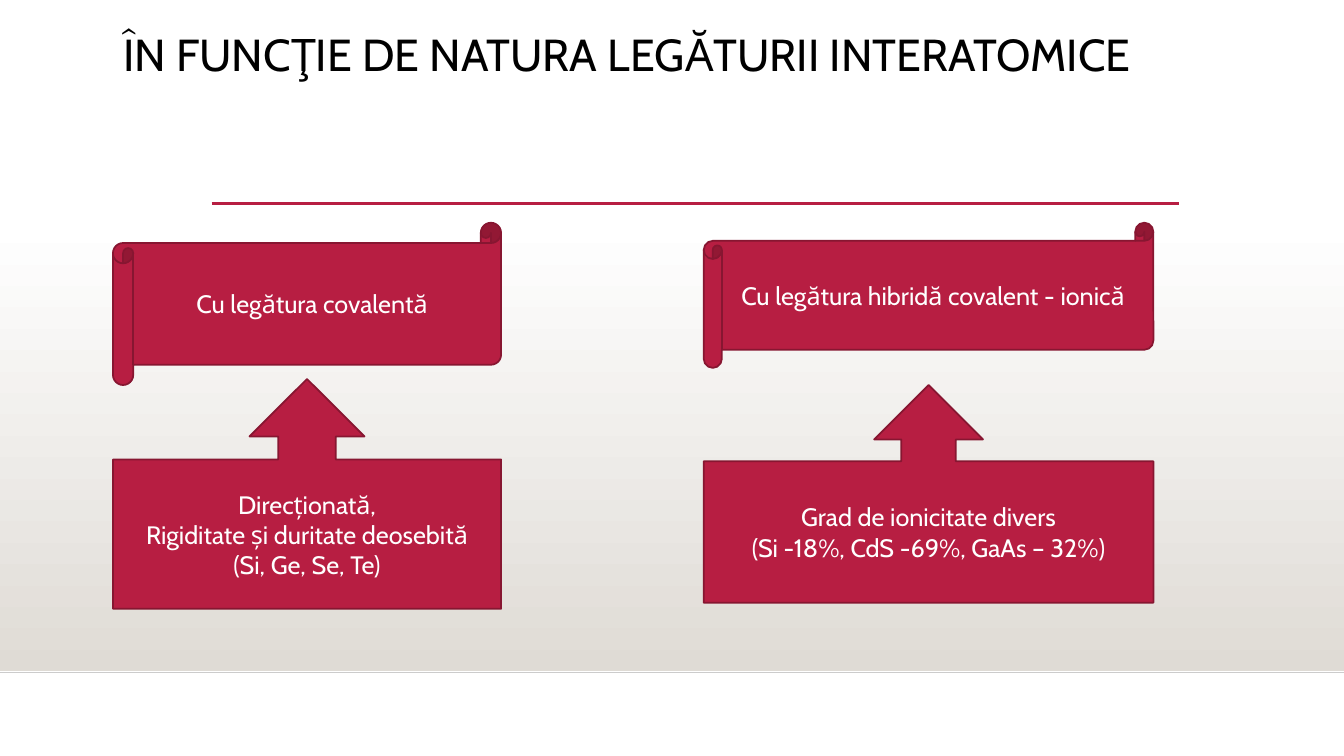
import pptx
import pptx.dml.color
import pptx.enum.shapes
import pptx.enum.text
import pptx.oxml.ns
import pptx.util
from lxml import etree
from pptx.util import Inches

SHAPES = pptx.enum.shapes.MSO_SHAPE
ALIGN = pptx.enum.text.PP_ALIGN
ANCHOR = pptx.enum.text.MSO_ANCHOR
FONT = "Cabin"
CRIMSON = "B71E42"
DARK_CRIMSON = "871631"


def color(hex_code):
    """Return the RGB colour for a hex string."""
    return pptx.dml.color.RGBColor.from_string(hex_code)


def write(para, text, size, hex_code, align):
    """Add one formatted run to an aligned paragraph."""
    para.alignment = align
    span = para.add_run()
    span.text = text
    span.font.name = FONT
    span.font.size = pptx.util.Pt(size)
    span.font.color.rgb = color(hex_code)


def add_title(slide, text):
    """Place and fill the title placeholder."""
    title = slide.shapes.title
    title.left, title.top = Inches(1.12), Inches(0.28)
    title.width, title.height = Inches(10.98), Inches(1.15)
    frame = title.text_frame
    frame.word_wrap = True
    frame.vertical_anchor = ANCHOR.TOP
    para = frame.paragraphs[0]
    para.line_spacing = 0.9
    write(para, text, 32, "000000", ALIGN.LEFT)


def add_backdrop(slide):
    """Add the band that fades from white to warm grey."""
    band = slide.shapes.add_shape(
        SHAPES.RECTANGLE, 0, Inches(2.2), Inches(13.33), Inches(4.46))
    band.shadow.inherit = False
    band.line.fill.background()
    band.fill.gradient()
    band.fill.gradient_angle = 270
    for stop, hex_code in zip(band.fill.gradient_stops, ("FFFFFF", "DFDBD5")):
        stop.color.rgb = color(hex_code)


def add_rule(slide, left, right, top, hex_code, width):
    """Add a horizontal line without a shadow."""
    rule = slide.shapes.add_connector(
        pptx.enum.shapes.MSO_CONNECTOR.STRAIGHT,
        Inches(left), Inches(top), Inches(right), Inches(top))
    rule.line.color.rgb = color(hex_code)
    rule.line.width = pptx.util.Pt(width)
    etree.SubElement(rule.element.spPr, pptx.oxml.ns.qn("a:effectLst"))


def add_box(slide, kind, left, top, width, height, lines):
    """Add a crimson shape with centred white lines of text."""
    box = slide.shapes.add_shape(
        kind, Inches(left), Inches(top), Inches(width), Inches(height))
    box.shadow.inherit = False
    box.fill.solid()
    box.fill.fore_color.rgb = color(CRIMSON)
    box.line.color.rgb = color(DARK_CRIMSON)
    box.line.width = pptx.util.Pt(1.25)
    frame = box.text_frame
    frame.word_wrap = True
    frame.vertical_anchor = ANCHOR.MIDDLE
    for index, text in enumerate(lines):
        para = frame.add_paragraph() if index else frame.paragraphs[0]
        write(para, text, 18, "FFFFFF", ALIGN.CENTER)


def add_bond(slide, left, width, scroll, callout):
    """Add a bond type's scroll and the callout pointing up to it."""
    scroll_height, heading = scroll
    callout_top, callout_height, lines = callout
    add_box(slide, SHAPES.HORIZONTAL_SCROLL, left, 2.21, width,
            scroll_height, [heading])
    add_box(slide, SHAPES.UP_ARROW_CALLOUT, left, callout_top, width,
            callout_height, lines)


def main():
    """Build and save the slide."""
    deck = pptx.Presentation()
    deck.slide_width, deck.slide_height = Inches(13.33), Inches(7.5)
    slide = deck.slides.add_slide(deck.slide_layouts.get_by_name("Title Only"))
    add_backdrop(slide)
    add_rule(slide, 0, 13.33, 6.67, "CCCCCC", 1)
    add_rule(slide, 2.1, 11.69, 2.02, CRIMSON, 2.5)
    add_title(slide, "ÎN FUNCŢIE DE NATURA LEGĂTURII INTERATOMICE")
    add_bond(slide, 1.12, 3.85, (1.61, "Cu legătura covalentă"),
             (3.76, 2.28, ["Direcționată,",
                           "Rigiditate și duritate deosebită",
                           "(Si, Ge, Se, Te)"]))
    add_bond(slide, 6.98, 4.46, (1.44, "Cu legătura hibridă covalent - ionică"),
             (3.82, 2.16, ["Grad de ionicitate divers",
                           "(Si -18%, CdS -69%, GaAs – 32%)"]))
    deck.save("out.pptx")


if __name__ == "__main__":
    main()
